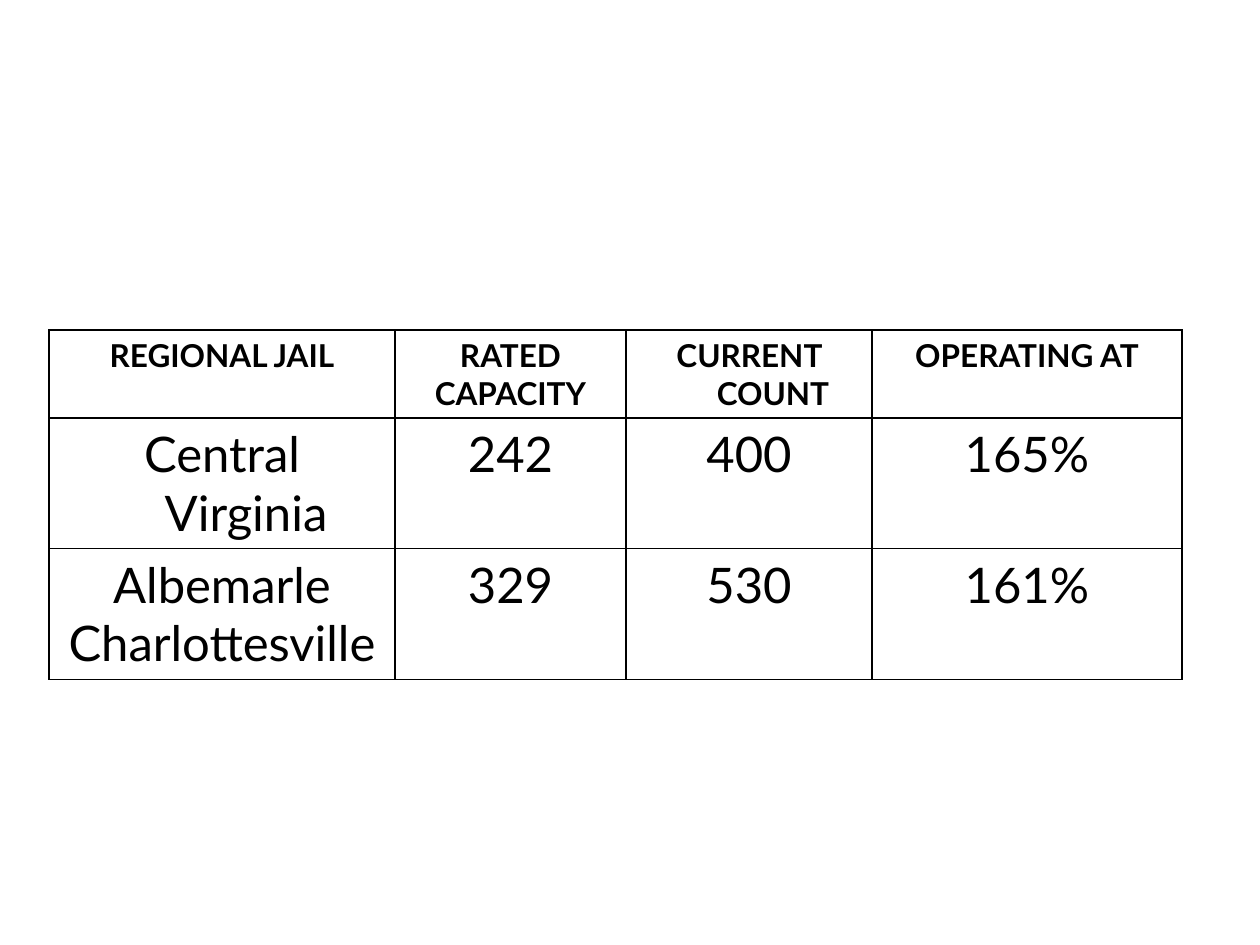
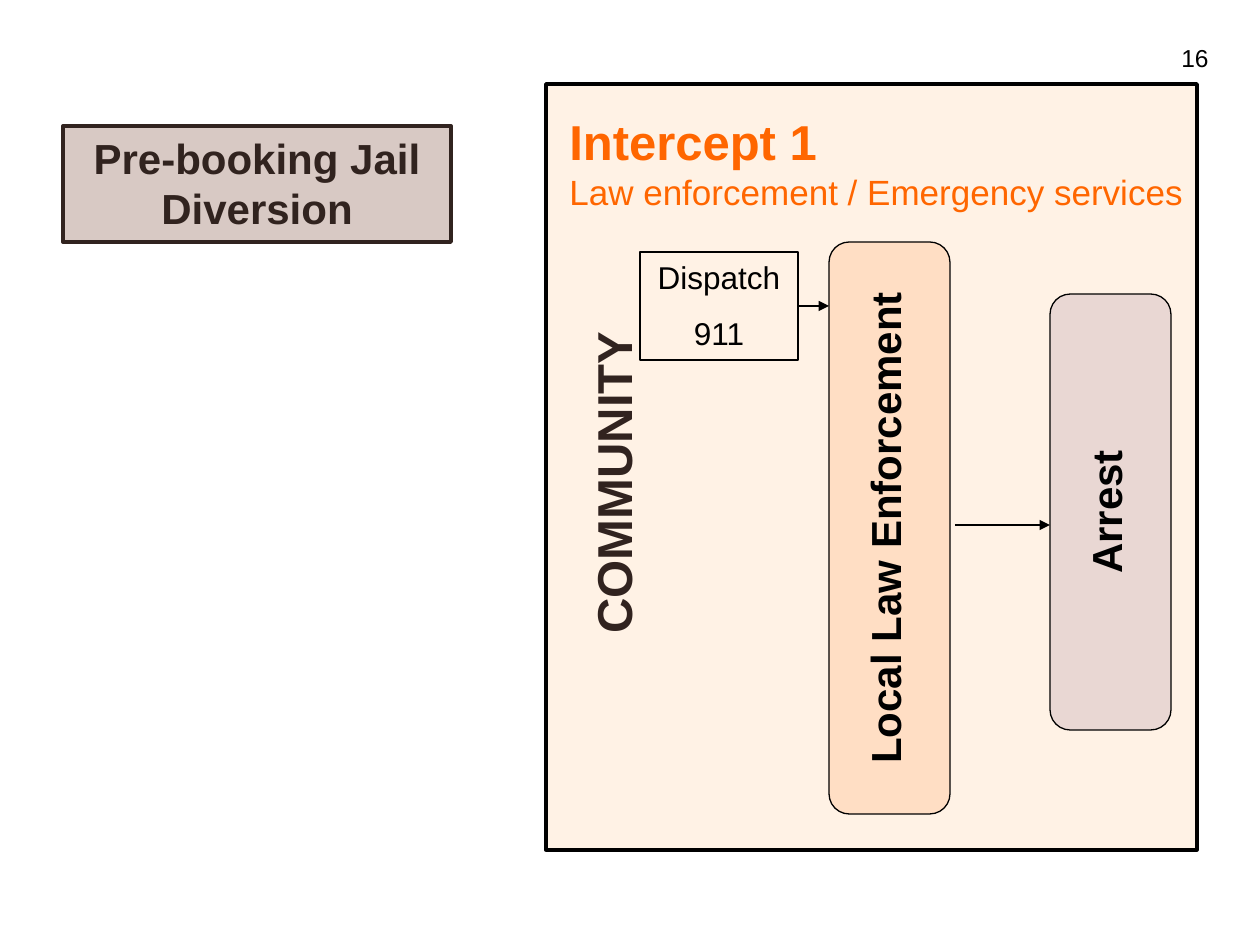
from lxml.etree import SubElement as Sub
from pptx import Presentation
from pptx.dml.color import RGBColor as RGB
from pptx.enum.shapes import MSO_CONNECTOR as Link, MSO_SHAPE as Form
from pptx.enum.text import MSO_ANCHOR as Anchor, MSO_AUTO_SIZE as Fit, PP_ALIGN as Align
from pptx.oxml.ns import qn
from pptx.util import Emu, Pt

# Shared look
INK, DARK, WHITE, FLAME = "000000", "31231F", "FFFFFF", "FF6600"
ROSE, CREAM, PLUM = "D8C9C4", "FFF2E5", "663366"
SANS, LATO = "Arial", "Lato"
SIZE = (1260, 945)

# Jail table: each cell is a list of paragraphs
JAILS = [
    [["REGIONAL JAIL"], ["RATED", "CAPACITY"], ["CURRENT COUNT"], ["OPERATING AT"]],
    [["Central Virginia"], ["242"], ["400"], ["165%"]],
    [["Albemarle", "Charlottesville"], ["329"], ["530"], ["161%"]],
]
GRID = (49, 330)
COLS = [346, 231, 246, 310]
ROWS = [88, 130, 131]
HANG = 48

# Intercept diagram: boxes are left, top, width, height
TITLE = ("Pre-booking Jail Diversion", (63, 126, 388, 116))
PAGE = ("16", (1144, 33, 77, 50))
PANEL = (546, 84, 651, 766)
HEAD = (557, 105, 703, 78)
HEADS = [("Intercept 1", 28, True), ("Law enforcement / Emergency services", 20, False)]
SIDE = ("COMMUNITY", (404, 456, 399, 53))
BARS = [
    ("Local Law Enforcement", FLAME, (829, 242, 121, 572)),
    ("Arrest", PLUM, (1050, 294, 121, 436)),
]
CALL = (["Dispatch", "911"], (640, 252, 158, 108))
LABEL, SHIFT, TRIM = 97, 12, 26
FLOW = 525


def px(n):
    return Emu(round(n * 914400 / 126))


def span(box):
    return [px(n) for n in box]


def hue(code):
    return RGB.from_string(code)


def write(frame, lines, size, color=INK, bold=False, font=SANS, align=Align.CENTER, gap=0):
    """Add each line as a paragraph; a line may carry its own size and weight."""
    frame.word_wrap = True
    for i, line in enumerate(lines):
        text, pt, heavy = line if isinstance(line, tuple) else (line, size, bold)
        par = frame.add_paragraph() if i else frame.paragraphs[0]
        par.alignment = align
        par.space_before = Pt(gap if i else 0)
        run = par.add_run()
        run.text = text
        run.font.size, run.font.bold, run.font.name = Pt(pt), heavy, font
        run.font.color.rgb = hue(color)


def label(shapes, box, lines, size, turn=0, **look):
    area = shapes.add_textbox(*span(box))
    area.rotation = turn
    write(area.text_frame, lines, size, **look)
    return area


def paint(shape, fill, line, width):
    if fill:
        shape.fill.solid()
        shape.fill.fore_color.rgb = hue(fill)
    else:
        shape.fill.background()
    shape.line.color.rgb = hue(line)
    shape.line.width = Pt(width)


def block(shapes, form, box, fill, width):
    shape = shapes.add_shape(form, *span(box))
    shape.shadow.inherit = False
    paint(shape, fill, INK, width)
    return shape


def bar(slide, text, color, box):
    """Tinted upright bar with its turned label, kept as one group."""
    left, top, wide, tall = box
    shapes = slide.shapes.add_group_shape().shapes
    shape = block(shapes, Form.ROUNDED_RECTANGLE, box, color, 0.75)
    shape.adjustments[0] = 0.167
    tint = shape.fill._xPr.find(qn("a:solidFill"))[0]
    Sub(tint, qn("a:alpha"), val="14000")
    long = tall - TRIM
    mid_x, mid_y = left + wide / 2 + SHIFT, top + tall / 2
    area = (mid_x - long / 2, mid_y - LABEL / 2, long, LABEL)
    label(shapes, area, [text], 24, turn=270, bold=True)


def arrow(slide, start, end, y):
    line = slide.shapes.add_connector(Link.STRAIGHT, px(start), px(y), px(end), px(y))
    line.line.color.rgb = hue(INK)
    line.line.width = Pt(0.75)
    Sub(line.line._get_or_add_ln(), qn("a:tailEnd"), type="triangle")
    Sub(line._element.spPr, qn("a:effectLst"))
    return line


def edge(cell):
    props = cell._tc.get_or_add_tcPr()
    for side in "LRTB":
        line = Sub(props, qn("a:ln" + side), w=str(Pt(1)))
        Sub(Sub(line, qn("a:solidFill")), qn("a:srgbClr"), val=INK)


def jail_slide(deck):
    slide = deck.slides.add_slide(deck.slide_layouts[6])
    box = (*GRID, sum(COLS), sum(ROWS))
    table = slide.shapes.add_table(len(ROWS), len(COLS), *span(box)).table
    table.horz_banding = False
    for col, wide in zip(table.columns, COLS):
        col.width = px(wide)
    for r, row in enumerate(JAILS):
        table.rows[r].height = px(ROWS[r])
        for c, lines in enumerate(row):
            cell = table.cell(r, c)
            edge(cell)
            if r:
                cell.fill.background()
            else:
                cell.fill.solid()
                cell.fill.fore_color.rgb = hue(WHITE)
            write(cell.text_frame, lines, 28 if r else 18, bold=not r, font=LATO)
            for par in cell.text_frame.paragraphs:
                props = par._p.get_or_add_pPr()
                props.set("marL", str(px(HANG)))
                props.set("indent", str(px(-HANG)))


def intercept_slide(deck):
    slide = deck.slides.add_slide(deck.slide_layouts[5])
    shapes = slide.shapes

    # Title box and page number
    text, box = TITLE
    title = shapes.title
    title.left, title.top, title.width, title.height = span(box)
    paint(title, ROSE, DARK, 2.25)
    title.text_frame.auto_size = Fit.NONE
    title.text_frame.vertical_anchor = Anchor.TOP
    write(title.text_frame, [text], 24, color=DARK, bold=True)
    text, box = PAGE
    page = label(shapes, box, [text], 14, align=Align.RIGHT)
    page.text_frame.vertical_anchor = Anchor.MIDDLE

    # Panel with heading and side label
    block(shapes, Form.RECTANGLE, PANEL, CREAM, 2)
    text, box = SIDE
    label(shapes, box, [text], 28, turn=270, color=DARK, bold=True)
    label(shapes, HEAD, HEADS, 28, color=FLAME, align=Align.LEFT)

    # Steps and arrows
    for step in BARS:
        bar(slide, *step)
    lines, box = CALL
    call = block(shapes, Form.RECTANGLE, box, None, 0.75)
    call.text_frame.vertical_anchor = Anchor.TOP
    write(call.text_frame, lines, 18, gap=10)
    law, jail = (spot for _, _, spot in BARS)
    left, top, wide, tall = box
    link = arrow(slide, left + wide, law[0], top + tall / 2)
    link.begin_connect(call, 3)
    arrow(slide, law[0] + law[2] + 5, jail[0], FLOW)


def main():
    deck = Presentation()
    deck.slide_width, deck.slide_height = span(SIZE)
    jail_slide(deck)
    intercept_slide(deck)
    deck.save("out.pptx")


if __name__ == "__main__":
    main()
